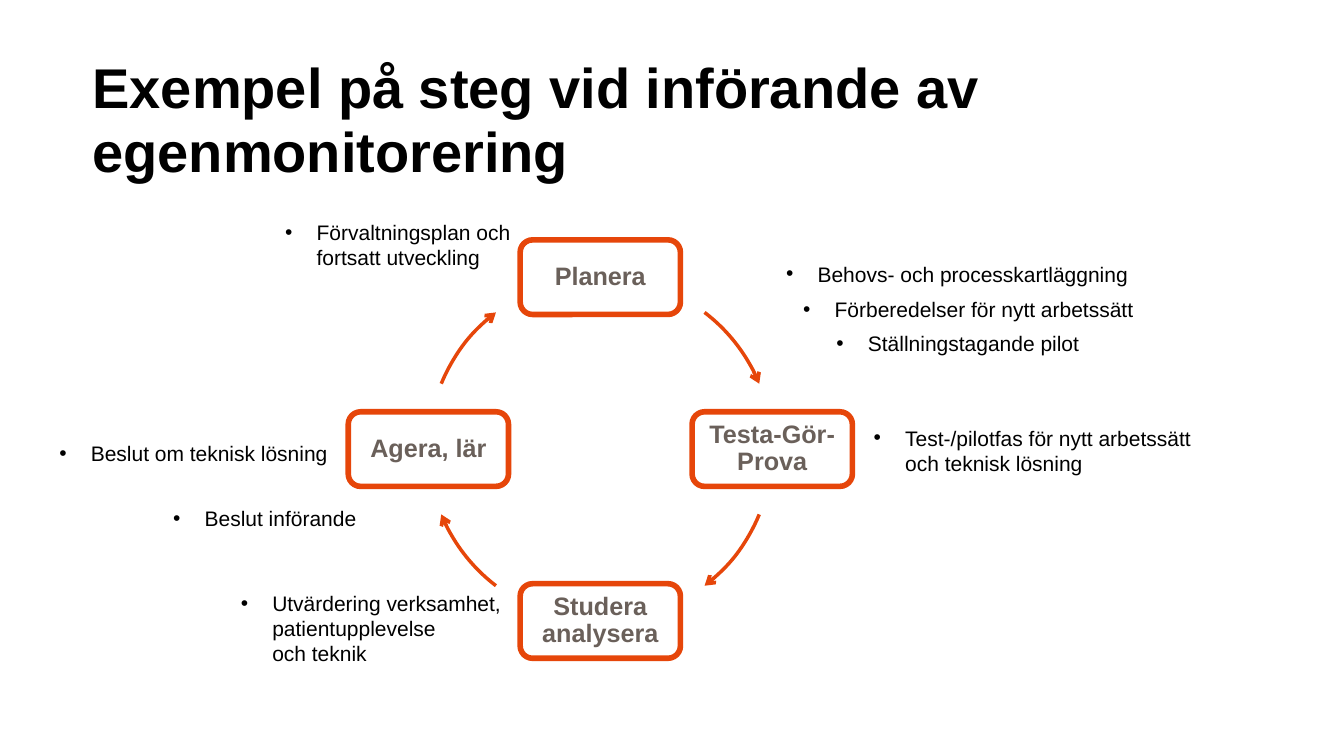
from math import cos, radians, sin

from lxml.etree import SubElement
from pptx import Presentation
from pptx.dml.color import RGBColor
from pptx.enum.shapes import MSO_SHAPE
from pptx.enum.text import MSO_ANCHOR, PP_ALIGN
from pptx.oxml.ns import qn
from pptx.util import Pt

COLORS = {"text": "000000", "step": "6A605A", "accent": "E6460A"}
FONT = "Arial"

# Cycle geometry, in points
CENTER_X, CENTER_Y, RADIUS = 428.8, 320.8, 122.8
STEP_WIDTH, STEP_HEIGHT = 114.5, 53.3
ARC_MIDDLES = (-37.5, 37.5, 142.5, 217.5)
ARC_HALF_SPAN = 15.15

# Steps clockwise from the top
STEPS = ("Planera", "Testa-Gör-Prova", "Studera\nanalysera", "Agera, lär")

# Left, top, width, number of lines, text
NOTES = (
    (196.6, 153.4, 177.8, 2, "Förvaltningsplan och fortsatt utveckling"),
    (554.4, 182.9, 349.2, 1, "Behovs- och processkartläggning"),
    (566.6, 208.1, 349.2, 1, "Förberedelser för nytt arbetssätt"),
    (590.4, 232.6, 313.9, 1, "Ställningstagande pilot"),
    (617, 300.2, 247, 2, "Test-/pilotfas för nytt arbetssätt och teknisk lösning"),
    (164.9, 418.3, 209.5, 3, "Utvärdering verksamhet, patientupplevelse\noch teknik"),
    (116.6, 357.8, 236.9, 1, "Beslut införande"),
    (35.3, 311, 208.1, 1, "Beslut om teknisk lösning"),
)


def color(name):
    return RGBColor.from_string(COLORS[name])


def add_text(para, text, size, color_name, bold=False):
    for index, line in enumerate(text.split("\n")):
        if index:
            para.add_line_break()
        span = para.add_run()
        span.text = line
        span.font.name = FONT
        span.font.size = Pt(size)
        span.font.bold = bold
        span.font.color.rgb = color(color_name)


def add_box(page, left, top, width, height):
    box = page.shapes.add_textbox(Pt(left), Pt(top), Pt(width), Pt(height))
    box.text_frame.word_wrap = True
    return box.text_frame.paragraphs[0]


def add_title(page, text):
    para = add_box(page, 59, 37.4, 862.6, 97.2)
    para.line_spacing = 0.95
    add_text(para, text, 40, "text", bold=True)


def add_outline(page, kind, left, top, width, height, weight):
    shape = page.shapes.add_shape(kind, Pt(left), Pt(top), Pt(width), Pt(height))
    shape.shadow.inherit = False
    shape.fill.background()
    shape.line.color.rgb = color("accent")
    shape.line.width = Pt(weight)
    return shape


def add_step(page, text, angle):
    left = CENTER_X + RADIUS * cos(radians(angle)) - STEP_WIDTH / 2
    top = CENTER_Y + RADIUS * sin(radians(angle)) - STEP_HEIGHT / 2
    shape = add_outline(page, MSO_SHAPE.ROUNDED_RECTANGLE, left, top,
                        STEP_WIDTH, STEP_HEIGHT, 4)
    frame = shape.text_frame
    frame.word_wrap = True
    frame.vertical_anchor = MSO_ANCHOR.MIDDLE
    frame.margin_left = frame.margin_right = Pt(7.8)
    frame.margin_top = frame.margin_bottom = Pt(5)
    para = frame.paragraphs[0]
    para.alignment = PP_ALIGN.CENTER
    para.line_spacing = 0.9
    add_text(para, text, 18, "step", bold=True)


def add_arc_arrow(page, middle):
    arc = add_outline(page, MSO_SHAPE.ARC, CENTER_X - RADIUS, CENTER_Y - RADIUS,
                      2 * RADIUS, 2 * RADIUS, 2.5)
    # Arc angles are in 60000ths of a degree, adjustments in 100000ths
    for index, edge in enumerate((-ARC_HALF_SPAN, ARC_HALF_SPAN)):
        arc.adjustments[index] = (middle + edge) % 360 * 0.6
    line = arc.line._get_or_add_ln()
    SubElement(line, qn("a:tailEnd"), type="arrow")


def add_note(page, left, top, width, lines, text):
    para = add_box(page, left, top, width, 18 * lines + 7.2)
    properties = para._p.get_or_add_pPr()
    indent = Pt(22.5)
    properties.set("marL", str(indent))
    properties.set("indent", str(-indent))
    SubElement(properties, qn("a:buFont"), typeface=FONT)
    SubElement(properties, qn("a:buChar"), char="•")
    add_text(para, text, 15, "text")


def main():
    deck = Presentation()
    deck.slide_width, deck.slide_height = Pt(960), Pt(540)
    page = deck.slides.add_slide(deck.slide_layouts[6])

    add_title(page, "Exempel på steg vid införande av egenmonitorering")

    # Cycle of steps and arrows
    for index, (text, middle) in enumerate(zip(STEPS, ARC_MIDDLES)):
        add_step(page, text, 90 * index - 90)
        add_arc_arrow(page, middle)

    # Notes around the cycle
    for note in NOTES:
        add_note(page, *note)

    deck.save("out.pptx")


if __name__ == "__main__":
    main()
